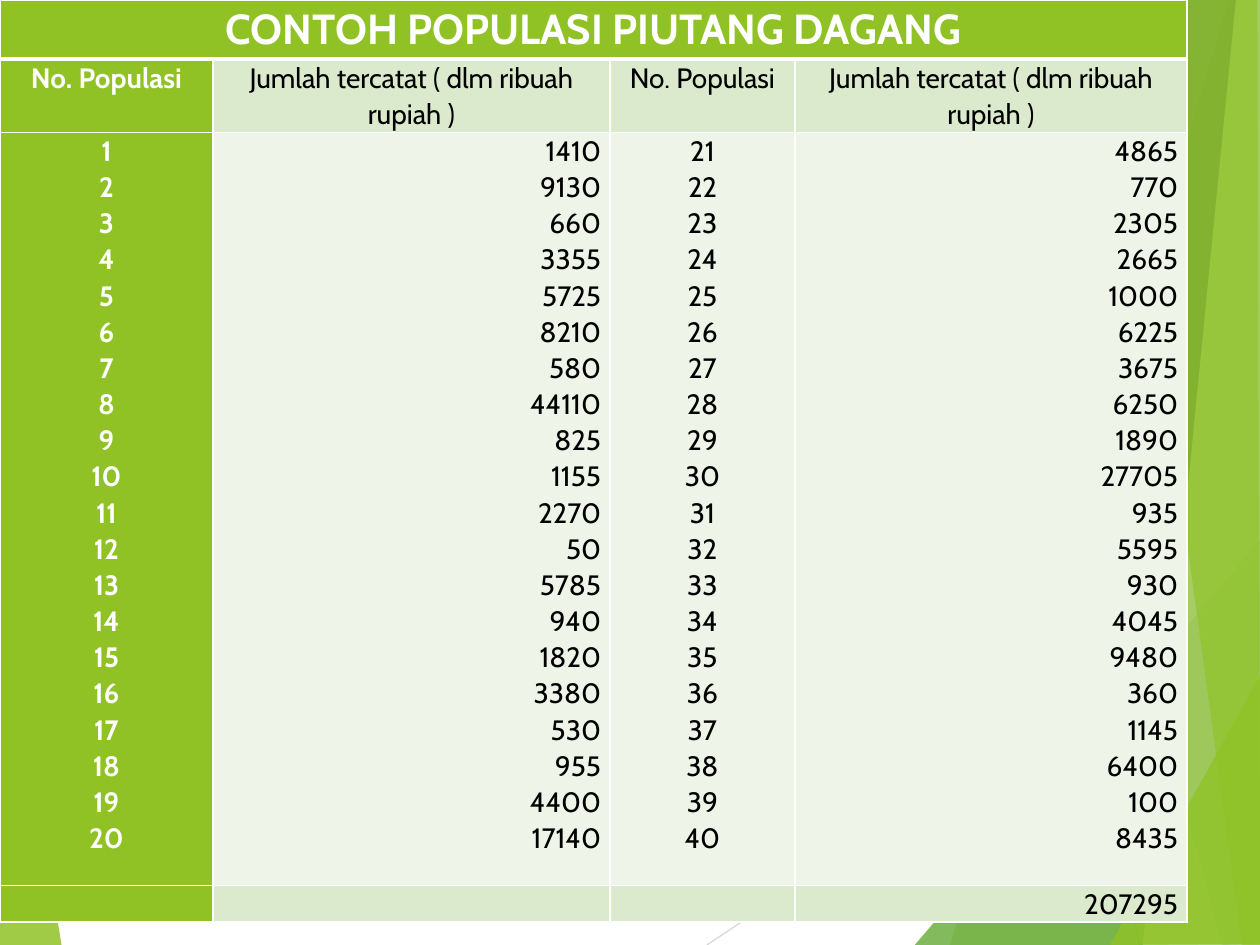
from pptx import Presentation
from pptx.dml.color import RGBColor as RGB
from pptx.enum.shapes import MSO_CONNECTOR as CONN
from pptx.enum.text import PP_ALIGN as AL
from pptx.oxml.ns import qn
from pptx.util import Inches, Pt
from lxml.etree import SubElement

COLORS = {
    "green": "90C226", "leaf": "54A021", "forest": "3F7819", "lime": "C0E474",
    "band": "DBE9CD", "pale": "EEF4E8", "white": "FFFFFF", "black": "000000",
    "silver": "BFBFBF", "light": "D9D9D9",
}
LINES = [
    ((5.61, 7.5), (10.01, 4.57), "light"),
    ((7.7, 0), (9.04, 7.5), "silver"),
]
CORNER = ([(-0.01, 4.39), (0.49, 7.51), (-0.01, 7.5)], "green", 85)
FACETS = [
    ([(9.75, 0), (7.54, 7.5), (10.02, 7.51), (10.01, 0.01)], "green", 30),
    ([(7.88, -0.01), (9.19, 7.5), (10.01, 7.5), (10.01, -0.01)], "green", 20),
    ([(7.26, 7.5), (10, 4.29), (10.01, 7.5)], "leaf", 72),
    ([(7.67, -0.01), (9.7, 7.5), (10.01, 7.49), (10.01, -0.01)], "forest", 70),
    ([(9.81, -0.01), (9.07, 7.5), (10.01, 7.5), (10, -0.01)], "lime", 70),
    ([(8.83, -0.01), (9.86, 7.5), (10, 7.5), (9.98, -0.01)], "green", 65),
    ([(8.81, 7.5), (10.01, 5.35), (10.01, 7.49)], "green", 80),
]
TITLE = "CONTOH POPULASI PIUTANG DAGANG"
HEADERS = ["No. Populasi", "Jumlah tercatat ( dlm ribuah rupiah )"] * 2
AMOUNTS = [
    1410, 9130, 660, 3355, 5725, 8210, 580, 44110, 825, 1155,
    2270, 50, 5785, 940, 1820, 3380, 530, 955, 4400, 17140,
    4865, 770, 2305, 2665, 1000, 6225, 3675, 6250, 1890, 27705,
    935, 5595, 930, 4045, 9480, 360, 1145, 6400, 100, 8435,
]
TOTAL = "207295"
COLS = [1.69, 3.15, 1.47, 3.11]
ROWS = [0.47, 0.58, 5.98, 0.29]


class Deck:
    font = "Cabin"
    spacing = 1.07
    margins = {"margin_left": Inches(0.07), "margin_right": Inches(0.07),
               "margin_top": 0, "margin_bottom": 0}

    def __init__(self, width, height):
        self.prs = Presentation()
        self.prs.slide_width, self.prs.slide_height = Inches(width), Inches(height)
        self.s = self.prs.slides.add_slide(self.prs.slide_layouts[6])

    def rgb(self, name):
        return RGB.from_string(COLORS[name])

    def facet(self, points, color, opacity):
        pts = [(Inches(x), Inches(y)) for x, y in points]
        fb = self.s.shapes.build_freeform(*pts[0])
        fb.add_line_segments(pts[1:], close=True)
        sp = fb.convert_to_shape()
        sp.shadow.inherit = False
        sp.fill.solid()
        sp.fill.fore_color.rgb = self.rgb(color)
        sp.line.fill.background()
        clr = sp._element.spPr.find(qn("a:solidFill"))[0]
        SubElement(clr, qn("a:alpha"), val=str(opacity * 1000))

    def line(self, start, end, color):
        ends = [Inches(v) for v in (*start, *end)]
        cx = self.s.shapes.add_connector(CONN.STRAIGHT, *ends)
        cx.line.color.rgb = self.rgb(color)
        cx.line.width = Pt(0.75)
        SubElement(cx._element.spPr, qn("a:effectLst"))

    def table(self, cols, rows):
        frame = self.s.shapes.add_table(len(rows), len(cols), 0, 0,
                                        Inches(sum(cols)), Inches(sum(rows)))
        tbl = frame.table
        tbl.first_row = tbl.horz_banding = False
        for col, width in zip(tbl.columns, cols):
            col.width = Inches(width)
        for row, height in zip(tbl.rows, rows):
            row.height = Inches(height)
        return tbl

    def borders(self, cell, **widths):
        tc_pr = cell._tc.get_or_add_tcPr()
        for side in "LRTB":
            ln = SubElement(tc_pr, qn("a:ln" + side), w=str(Pt(widths.get(side, 1))))
            fill = SubElement(ln, qn("a:solidFill"))
            SubElement(fill, qn("a:srgbClr"), val=COLORS["white"])

    def cell(self, cell, lines, fill, align=AL.CENTER, size=16, color="black", bold=False):
        for name, value in self.margins.items():
            setattr(cell, name, value)
        cell.fill.solid()
        cell.fill.fore_color.rgb = self.rgb(fill)
        fmt = {"name": self.font, "size": Pt(size), "bold": bold}
        tf = cell.text_frame
        for i, text in enumerate(lines):
            p = tf.add_paragraph() if i else tf.paragraphs[0]
            p.alignment, p.line_spacing = align, self.spacing
            r = p.add_run()
            r.text = str(text)
            for name, value in fmt.items():
                setattr(r.font, name, value)
            r.font.color.rgb = self.rgb(color)


def main():
    deck = Deck(10, 7.5)
    deck.facet(*CORNER)
    for line in LINES:
        deck.line(*line)
    for facet in FACETS:
        deck.facet(*facet)

    tbl = deck.table(COLS, ROWS)
    edges = [{"B": 3}, {"T": 3}, {}, {}]
    for row, widths in zip(tbl.rows, edges):
        for cell in row.cells:
            deck.borders(cell, **widths)
    tbl.cell(0, 0).merge(tbl.cell(0, 3))
    deck.cell(tbl.cell(0, 0), [TITLE], "green", size=24, color="white", bold=True)

    half = len(AMOUNTS) // 2
    columns = [range(1, half + 1), AMOUNTS[:half],
               range(half + 1, 2 * half + 1), AMOUNTS[half:]]
    totals = ["", "", "", TOTAL]
    for c, (header, values, total) in enumerate(zip(HEADERS, columns, totals)):
        look = {"color": "white", "bold": True} if c == 0 else {}
        align = AL.RIGHT if c % 2 else AL.CENTER
        band, pale = ("green", "green") if c == 0 else ("band", "pale")
        deck.cell(tbl.cell(1, c), [header], band, **look)
        deck.cell(tbl.cell(2, c), values, pale, align, **look)
        deck.cell(tbl.cell(3, c), [total], band, align, **look)

    deck.prs.save("out.pptx")


if __name__ == "__main__":
    main()
